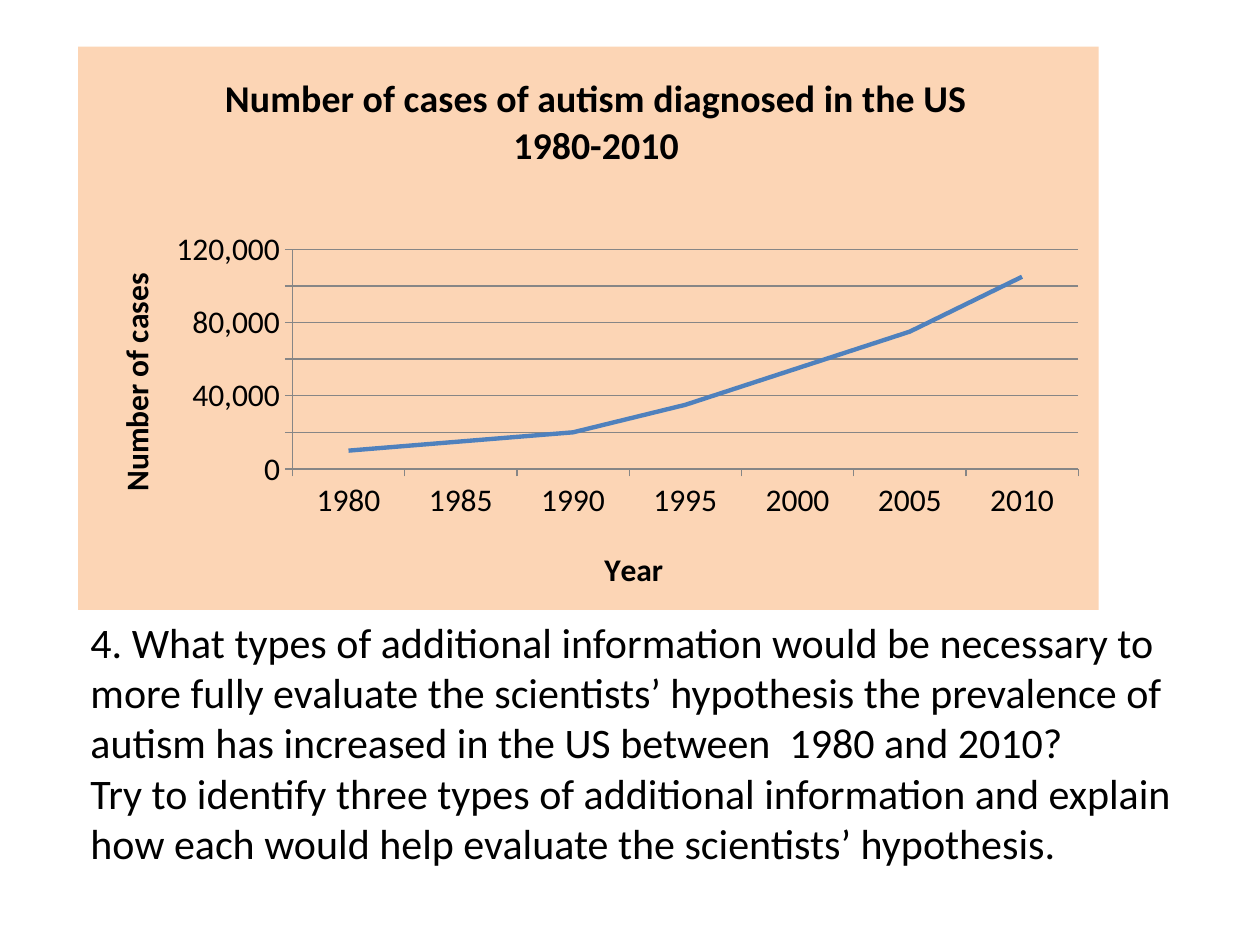
from dataclasses import dataclass
from typing import Any

from lxml.etree import SubElement
from pptx import Presentation
from pptx.chart.data import CategoryChartData
from pptx.dml.color import RGBColor
from pptx.enum.chart import XL_CHART_TYPE, XL_TICK_MARK
from pptx.oxml.ns import qn
from pptx.util import Inches, Pt

BLACK = RGBColor(0, 0, 0)
GREY = RGBColor(0x86, 0x86, 0x86)
BLUE = RGBColor(0x4F, 0x81, 0xBD)
PEACH = RGBColor(0xFC, 0xD5, 0xB5)
FONT = "Calibri"
WIDE, HIGH = Inches(10), Inches(7.5)

LINES = [
    "4. What types of additional information would be necessary to",
    "more fully evaluate the scientists’ hypothesis the prevalence of",
    "autism has increased in the US between  1980 and 2010?",
    "Try to identify three types of additional information and explain",
    "how each would help evaluate the scientists’ hypothesis.",
]
YEARS = range(1980, 2011, 5)
CASES = [10000, 15000, 20000, 35000, 55000, 75000, 105000]


@dataclass
class Label:
    owner: Any
    lines: list[str]
    left: float
    top: float
    size: float = 18
    turn: int = 0


def put(frame: Any, lines: list[str], *, size: float, bold: bool = False,
        color: RGBColor = BLACK) -> None:
    for i, line in enumerate(lines):
        para = frame.paragraphs[0] if i == 0 else frame.add_paragraph()
        run = para.add_run()
        run.text = line
        font = run.font
        font.name, font.size, font.bold = FONT, Pt(size), bold
        font.color.rgb = color


def place(node: Any, after: str, **spots: Any) -> None:
    for old in node.findall(qn("c:layout")):
        node.remove(old)
    layout = SubElement(node, qn("c:layout"))
    manual = SubElement(layout, qn("c:manualLayout"))
    for key, value in spots.items():
        SubElement(manual, qn(f"c:{key}")).set("val", str(value))
    if after:
        node.find(qn(after)).addnext(layout)
    else:
        node.insert(0, layout)


def draw_label(label: Label) -> None:
    title = label.owner
    put(title.text_frame, label.lines, size=label.size, bold=True)
    node = title.text_frame.paragraphs[0]._p.getparent()
    node.find(qn("a:bodyPr")).set("rot", str(label.turn * 60000))
    place(title._element, "c:tx", xMode="edge", yMode="edge",
          x=label.left, y=label.top)


def rule(line: Any, color: RGBColor, width: float) -> None:
    line.color.rgb = color
    line.width = Pt(width)


def draw_chart(slide: Any) -> None:
    data = CategoryChartData(number_format="#,##0")
    data.categories = [str(year) for year in YEARS]
    data.add_series("Series 1", CASES)
    chart = slide.shapes.add_chart(
        XL_CHART_TYPE.LINE, Inches(0.62), Inches(0.37),
        Inches(8.1), Inches(4.47), data).chart
    chart.has_legend = False
    chart.font.name, chart.font.size = FONT, Pt(18)
    chart.font.color.rgb = BLACK

    space = chart._chartSpace
    props = SubElement(space, qn("c:spPr"))
    fill = SubElement(props, qn("a:solidFill"))
    SubElement(fill, qn("a:srgbClr")).set("val", str(PEACH))
    edge = SubElement(props, qn("a:ln"))
    SubElement(edge, qn("a:noFill"))
    space.find(qn("c:chart")).addnext(props)

    plot = chart.plots[0]
    plot.vary_by_categories = False
    series = plot.series[0]
    series.smooth = False
    rule(series.format.line, BLUE, 2.5)

    years, cases = chart.category_axis, chart.value_axis
    for axis in (years, cases):
        axis.major_tick_mark = XL_TICK_MARK.OUTSIDE
        axis.minor_tick_mark = XL_TICK_MARK.NONE
        rule(axis.format.line, GREY, 0.75)
    cases.minimum_scale, cases.maximum_scale = 0, 120000
    cases.major_unit = 20000
    cases.tick_labels.number_format = "#,##0"
    cases.tick_labels.number_format_is_linked = False
    cases.has_major_gridlines = True
    rule(cases.major_gridlines.format.line, GREY, 0.75)

    heading = ["Number of cases of autism diagnosed in the US", "1980-2010"]
    for label in (
        Label(chart.chart_title, heading, 0.14, 0.04, size=21.6),
        Label(years.axis_title, ["Year"], 0.51, 0.88),
        Label(cases.axis_title, ["Number of cases "], 0.03, 0.38, turn=-90),
    ):
        draw_label(label)
    chart.chart_title.include_in_layout = False

    area = space.find(qn("c:chart")).find(qn("c:plotArea"))
    place(area, "", layoutTarget="inner", xMode="edge", yMode="edge",
          x=0.21, y=0.36, w=0.77, h=0.39)


def main() -> None:
    deck = Presentation()
    deck.slide_width, deck.slide_height = WIDE, HIGH
    slide = deck.slides.add_slide(deck.slide_layouts[6])
    box = slide.shapes.add_textbox(
        Inches(0.62), Inches(4.84), Inches(8.94), Inches(3.33))
    box.text_frame.word_wrap = False
    put(box.text_frame, LINES, size=24)
    draw_chart(slide)
    deck.save("out.pptx")


if __name__ == "__main__":
    main()
